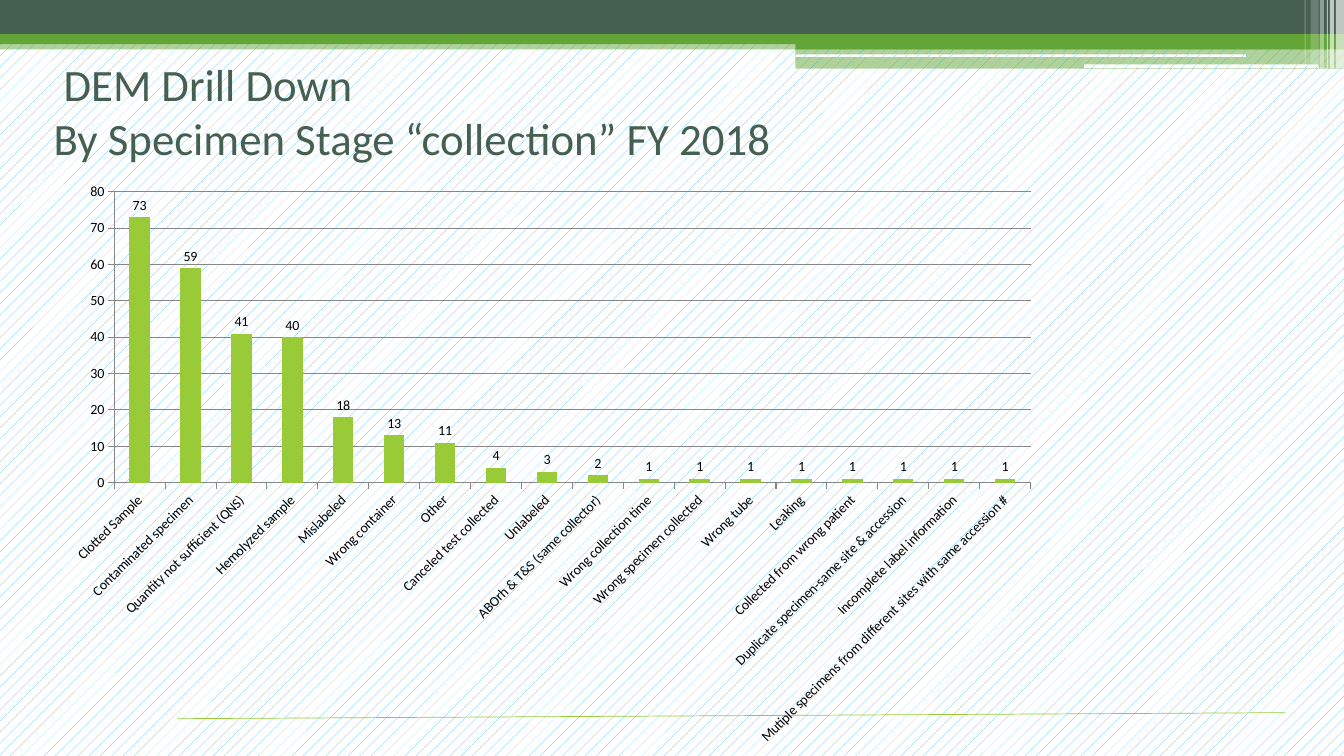
"""Build the specimen collection drill-down slide, with lengths in percent of the slide's size."""
import dataclasses
from typing import Any, Optional

import lxml.etree
import pptx
import pptx.chart.data
import pptx.dml.color
import pptx.enum.chart
import pptx.enum.dml
import pptx.enum.shapes
import pptx.enum.text
import pptx.oxml
import pptx.oxml.ns
import pptx.util


@dataclasses.dataclass(frozen=True)
class Theme:
    font: str = "Calibri"
    title_size: int = 32
    chart_size: int = 10
    dark: str = "455F51"
    green: str = "63A537"
    lime: str = "99CB38"
    sky: str = "51C3F9"
    white: str = "FFFFFF"
    black: str = "000000"
    grid: str = "878787"


@dataclasses.dataclass(frozen=True)
class Band:
    x: float
    y: float
    w: float
    h: float
    color: Optional[str] = None
    opacity: int = 100
    rounded: bool = False


THEME = Theme()
WIDTH, HEIGHT = pptx.util.Inches(13.33), pptx.util.Inches(7.5)
RIGHT_X, RIGHT_W = 59.19, 40.81

BANDS = [
    Band(0, 5.33, 100, 1.2, THEME.green, 50),
    Band(0, 0, 100, 4.53, THEME.dark),
    Band(0, 4.53, 100, 1.33, THEME.green),
    Band(RIGHT_X, 5.2, RIGHT_W, 1.33, THEME.green),
    Band(RIGHT_X, 6.4, RIGHT_W, 2.67, THEME.green, 50),
    Band(RIGHT_X, 7.2, 33.53, 0.4, rounded=True),
    Band(80.65, 8.53, 17.48, 0.53, rounded=True),
    Band(99.4, 0, 0.6, 9.07, THEME.white, 65),
    Band(98.95, 0, 0.3, 9.07, THEME.white, 65),
    Band(98.72, 0, 0.08, 9.07, THEME.white, 60),
    Band(98.2, 0, 0.3, 9.07, THEME.white, 40),
    Band(97.52, 0, 0.6, 8.53, THEME.white, 20),
    Band(97.07, 0, 0.08, 8.53, THEME.white, 30),
]

ERRORS = {
    "Clotted Sample": 73,
    "Contaminated specimen": 59,
    "Quantity not sufficient (QNS)": 41,
    "Hemolyzed sample": 40,
    "Mislabeled": 18,
    "Wrong container": 13,
    "Other": 11,
    "Canceled test collected": 4,
    "Unlabeled": 3,
    "ABOrh & T&S (same collector)": 2,
    "Wrong collection time": 1,
    "Wrong specimen collected": 1,
    "Wrong tube": 1,
    "Leaking": 1,
    "Collected from wrong patient": 1,
    "Duplicate specimen-same site & accession": 1,
    "Incomplete label information": 1,
    "Mutiple specimens from different sites with same accession #": 1,
}


def across(share: float) -> int:
    return round(WIDTH * share / 100)


def down(share: float) -> int:
    return round(HEIGHT * share / 100)


def rgb(color: str) -> pptx.dml.color.RGBColor:
    return pptx.dml.color.RGBColor.from_string(color)


def apply(target: Any, formats: dict[str, Any]) -> None:
    for name, value in formats.items():
        setattr(target, name, value)


def add_child(parent: Any, tag: str, **attributes: str) -> Any:
    return lxml.etree.SubElement(parent, pptx.oxml.ns.qn(tag), attributes)


def fill_pattern(fill: Any) -> None:
    fill.patterned()
    fill.pattern = pptx.enum.dml.MSO_PATTERN.PERCENT_10
    fill.fore_color.rgb = rgb(THEME.sky)
    fill.back_color.rgb = rgb(THEME.white)


def draw_band(slide: Any, band: Band) -> None:
    kinds = pptx.enum.shapes.MSO_SHAPE
    kind = kinds.ROUNDED_RECTANGLE if band.rounded else kinds.RECTANGLE
    strip = slide.shapes.add_shape(
        kind, across(band.x), down(band.y), across(band.w), down(band.h))
    strip.shadow.inherit = False
    strip.line.fill.background()
    if band.color is None:
        fill_pattern(strip.fill)
        return
    strip.fill.solid()
    strip.fill.fore_color.rgb = rgb(band.color)
    if band.opacity < 100:
        color = strip.fill._xPr.find(".//" + pptx.oxml.ns.qn("a:srgbClr"))
        add_child(color, "a:alpha", val=str(band.opacity * 1000))


def draw_footer_rule(slide: Any) -> None:
    rule = slide.shapes.add_connector(
        pptx.enum.shapes.MSO_CONNECTOR.STRAIGHT,
        across(13.2), down(95.07), across(95.65), down(94.27))
    rule.line.color.rgb = rgb(THEME.lime)
    rule.line.width = pptx.util.Pt(0.5)
    add_child(rule._element.spPr, "a:effectLst")


def write_heading(slide: Any) -> None:
    heading = slide.shapes.title
    apply(heading, {"left": across(3.23), "top": down(6.8),
                    "width": across(85.3), "height": down(16.8)})
    frame = heading.text_frame
    frame.text = "DEM Drill Down\nBy Specimen Stage “collection” FY 2018"
    apply(frame, {"word_wrap": True,
                  "auto_size": pptx.enum.text.MSO_AUTO_SIZE.NONE,
                  "vertical_anchor": pptx.enum.text.MSO_ANCHOR.TOP})
    for line in frame.paragraphs:
        line.alignment = pptx.enum.text.PP_ALIGN.LEFT
        apply(line.font, {"name": THEME.font, "size": pptx.util.Pt(THEME.title_size)})
        line.font.color.rgb = rgb(THEME.dark)
    frame.paragraphs[0]._p.get_or_add_pPr().set("indent", str(pptx.util.Inches(0.1)))


def place_plot(chart: Any) -> None:
    plot_area = chart._chartSpace.chart.plotArea
    for old in plot_area.findall(pptx.oxml.ns.qn("c:layout")):
        plot_area.remove(old)
    layout = pptx.oxml.parse_xml(f"<c:layout {pptx.oxml.ns.nsdecls('c')}/>")
    plot_area.insert(0, layout)
    manual = add_child(layout, "c:manualLayout")
    settings = {"layoutTarget": "inner", "xMode": "edge", "yMode": "edge",
                "x": "0.06", "y": "0.03", "w": "0.92", "h": "0.5"}
    for name, value in settings.items():
        add_child(manual, f"c:{name}", val=value)


def draw_error_chart(slide: Any) -> None:
    enums = pptx.enum.chart
    data = pptx.chart.data.CategoryChartData()
    data.categories = list(ERRORS)
    data.add_series("Series 1", list(ERRORS.values()))
    chart = slide.shapes.add_chart(
        enums.XL_CHART_TYPE.COLUMN_CLUSTERED,
        across(4.05), down(23.07), across(74.12), down(76.93), data).chart
    apply(chart, {"has_title": False, "has_legend": False})
    apply(chart.font, {"name": THEME.font, "size": pptx.util.Pt(THEME.chart_size)})
    chart.font.color.rgb = rgb(THEME.black)

    plot = chart.plots[0]
    apply(plot, {"gap_width": 150, "vary_by_categories": False, "has_data_labels": True})
    apply(plot.data_labels, {"show_value": True,
                             "position": enums.XL_LABEL_POSITION.OUTSIDE_END})
    columns = plot.series[0].format.fill
    columns.solid()
    columns.fore_color.rgb = rgb(THEME.lime)

    stages, counts = chart.category_axis, chart.value_axis
    apply(counts, {"minimum_scale": 0, "maximum_scale": 80, "major_unit": 10,
                   "has_major_gridlines": True})
    for axis in (stages, counts):
        axis.major_tick_mark = enums.XL_TICK_MARK.OUTSIDE
    for ruled in (stages, counts, counts.major_gridlines):
        ruled.format.line.color.rgb = rgb(THEME.grid)
        ruled.format.line.width = pptx.util.Pt(0.75)
    stages.tick_labels.font.size = pptx.util.Pt(THEME.chart_size)
    body = stages._element.find(pptx.oxml.ns.qn("c:txPr")).find(pptx.oxml.ns.qn("a:bodyPr"))
    apply_rotation = {"rot": str(-45 * 60000), "vert": "horz"}
    body.attrib.update(apply_rotation)
    place_plot(chart)


def main() -> None:
    deck = pptx.Presentation()
    apply(deck, {"slide_width": WIDTH, "slide_height": HEIGHT})
    slide = deck.slides.add_slide(deck.slide_layouts[5])
    fill_pattern(slide.background.fill)
    for band in BANDS:
        draw_band(slide, band)
    draw_footer_rule(slide)
    write_heading(slide)
    draw_error_chart(slide)
    deck.save("out.pptx")


if __name__ == "__main__":
    main()
